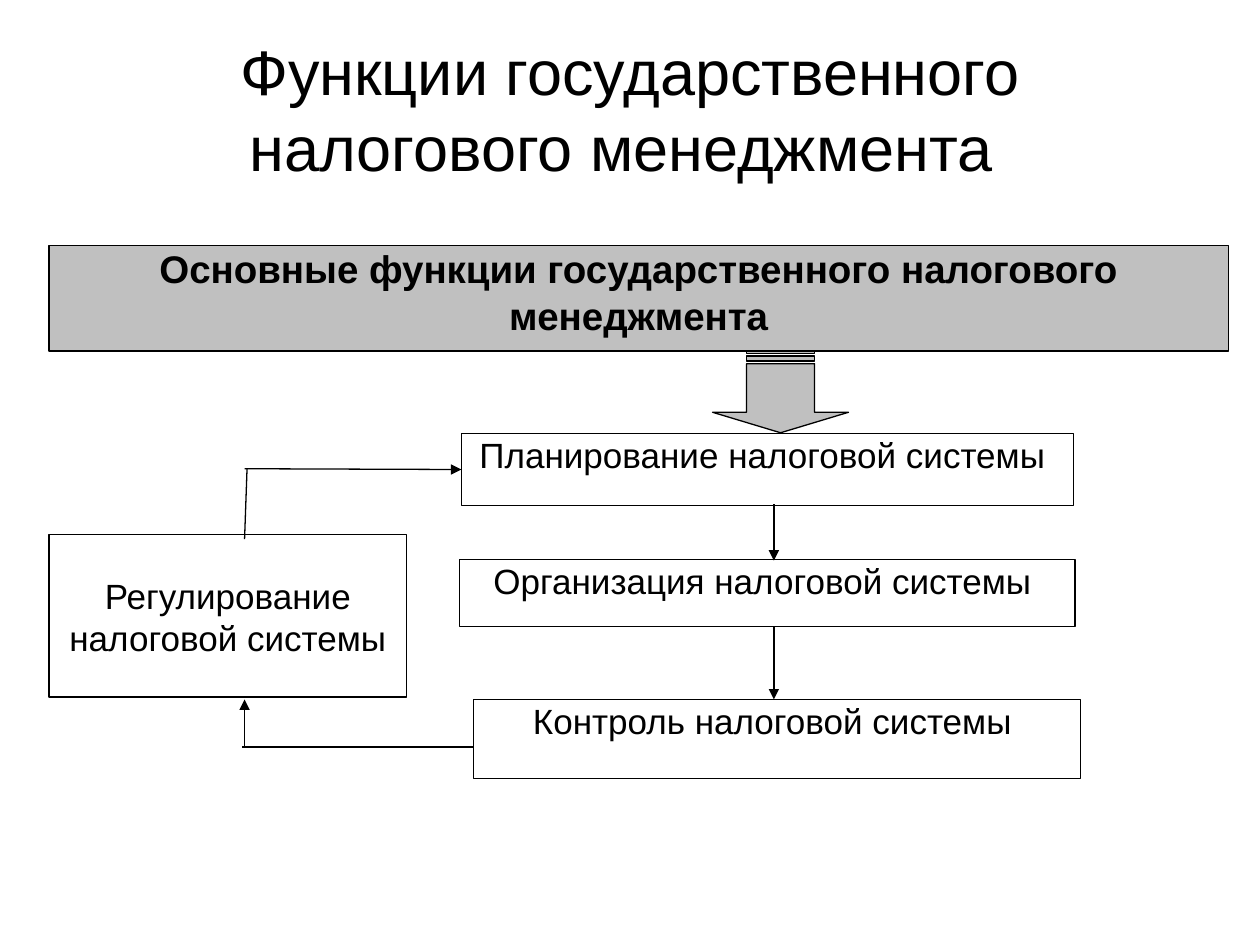
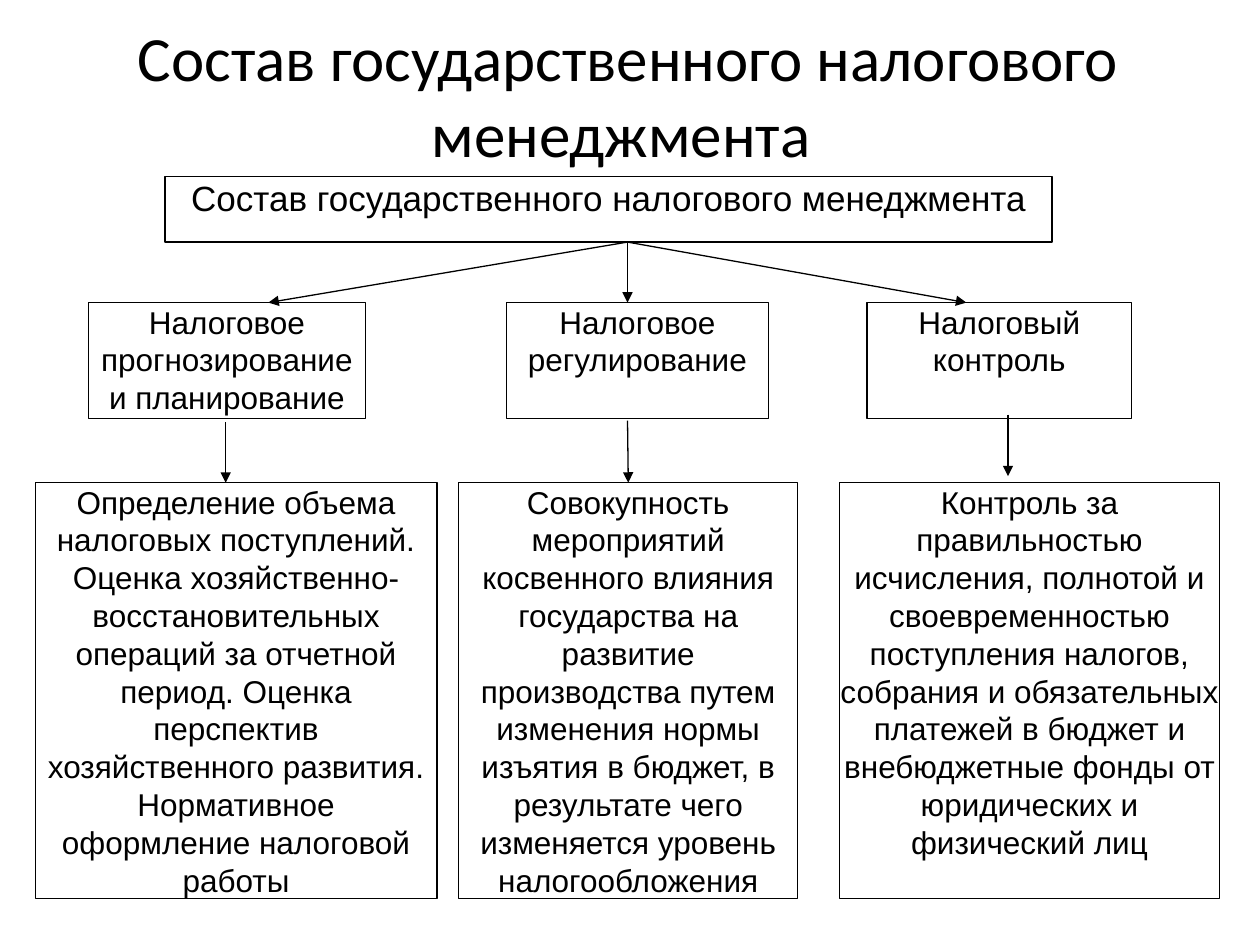
from dataclasses import dataclass

from lxml import etree
from pptx import Presentation
from pptx.dml.color import RGBColor
from pptx.enum.shapes import MSO_CONNECTOR, MSO_SHAPE
from pptx.enum.text import MSO_ANCHOR, MSO_AUTO_SIZE, PP_ALIGN
from pptx.oxml.ns import qn
from pptx.util import Cm, Pt

RECTANGLE = MSO_SHAPE.RECTANGLE
STRIPED_ARROW = MSO_SHAPE.STRIPED_RIGHT_ARROW
STRAIGHT = MSO_CONNECTOR.STRAIGHT
CENTER = PP_ALIGN.CENTER
TOP, MIDDLE = MSO_ANCHOR.TOP, MSO_ANCHOR.MIDDLE
NO_FIT = MSO_AUTO_SIZE.NONE
TOP_SIDE, LEFT_SIDE = 0, 1
TITLE_ONLY = 5


@dataclass(frozen=True)
class Theme:
    ink: RGBColor = RGBColor(0x00, 0x00, 0x00)
    paper: RGBColor = RGBColor(0xFF, 0xFF, 0xFF)
    accent: RGBColor = RGBColor(0xC0, 0xC0, 0xC0)
    font: str = "Arial"
    title_size: int = 36
    banner_size: int = 22
    box_size: int = 20
    detail_size: int = 18
    line_width: float = 0.75


class Diagram:
    """Draws diagram parts on the current page in one style."""

    def __init__(self, deck, theme):
        self.deck = deck
        self.theme = theme
        self.page = None

    def add_text(self, frame, text, size, font=None, bold=False):
        frame.word_wrap = True
        frame.auto_size = NO_FIT
        para = frame.paragraphs[0]
        para.alignment = CENTER
        span = para.add_run()
        span.text = text
        span.font.name = font or self.theme.font
        span.font.size = Pt(size)
        span.font.bold = bold
        span.font.color.rgb = self.theme.ink

    def add_page(self, text, place, font=None):
        self.page = self.deck.slides.add_slide(self.deck.slide_layouts[TITLE_ONLY])
        title = self.page.shapes.title
        title.left, title.top, title.width, title.height = map(Cm, place)
        title.text_frame.vertical_anchor = MIDDLE
        self.add_text(title.text_frame, text, self.theme.title_size, font)

    def add_outline(self, kind, place, fill):
        shape = self.page.shapes.add_shape(kind, *map(Cm, place))
        shape.shadow.inherit = False
        shape.fill.solid()
        shape.fill.fore_color.rgb = fill
        shape.line.color.rgb = self.theme.ink
        shape.line.width = Pt(self.theme.line_width)
        return shape

    def add_box(self, text, place, size=None, fill=None, bold=False, side=0, top=0):
        box = self.add_outline(RECTANGLE, place, fill or self.theme.paper)
        frame = box.text_frame
        frame.margin_left = frame.margin_right = Cm(side)
        frame.margin_top, frame.margin_bottom = Cm(top), Cm(0)
        frame.vertical_anchor = TOP
        self.add_text(frame, text, size or self.theme.box_size, bold=bold)
        return box

    def add_down_arrow(self, place):
        arrow = self.add_outline(STRIPED_ARROW, place, self.theme.accent)
        arrow.adjustments[1] = 0.25
        arrow.rotation = 90

    def add_line(self, start, end, head=True, join=None):
        line = self.page.shapes.add_connector(STRAIGHT, *map(Cm, start + end))
        line.line.color.rgb = self.theme.ink
        line.line.width = Pt(self.theme.line_width)
        properties = line.element.spPr
        if head:
            etree.SubElement(properties.find(qn("a:ln")), qn("a:tailEnd"), type="triangle")
        etree.SubElement(properties, qn("a:effectLst"))
        if join:
            line.end_connect(*join)


def build_functions(diagram):
    theme = diagram.theme
    diagram.add_page("Функции государственного налогового менеджмента ",
                     (1.27, 0.76, 22.86, 2.84), theme.font)

    # Banner and the cycle of functions
    diagram.add_box("Основные функции государственного налогового менеджмента",
                    (0.99, 4.95, 23.77, 2.13), theme.banner_size, theme.accent, bold=True)
    planning = diagram.add_box("Планирование налоговой системы ", (9.3, 8.74, 12.34, 1.45))
    diagram.add_box("Организация налоговой системы ", (9.27, 11.28, 12.4, 1.35))
    diagram.add_box("Контроль налоговой системы ", (9.55, 14.1, 12.24, 1.6))
    diagram.add_box("Регулирование налоговой системы", (0.99, 10.77, 7.21, 3.28), top=0.81)
    diagram.add_down_arrow((14.91, 6.53, 1.65, 2.74))

    # Control back to regulation, then to planning
    diagram.add_line((4.93, 15.06), (4.93, 14.1))
    diagram.add_line((4.88, 15.06), (9.55, 15.06), head=False)
    diagram.add_line((4.98, 9.45), (4.93, 10.87), head=False)
    diagram.add_line((4.93, 9.45), (9.3, 9.45), join=(planning, LEFT_SIDE))

    # Planning down to control
    for start, end in ((10.16, 11.3), (12.62, 14.1)):
        diagram.add_line((15.6, start), (15.6, end))


def build_structure(diagram):
    size = diagram.theme.detail_size
    diagram.add_page("Состав государственного налогового менеджмента ",
                     (0.46, 0.61, 24.41, 2.59), "Calibri")
    diagram.add_box("Состав государственного налогового менеджмента",
                    (3.33, 3.56, 17.88, 1.32))

    # Branches: text, left, width
    branches = (
        ("Налоговое прогнозирование и планирование", 1.78, 5.59),
        ("Налоговое регулирование", 10.21, 5.28),
        ("Налоговый контроль", 17.48, 5.33),
    )
    for text, left, width in branches:
        diagram.add_box(text, (left, 6.1, width, 2.34), size)

    # Content of each branch: text, left, width, side margin
    contents = (
        ("Определение объема налоговых поступлений. Оценка "
         "хозяйственно-восстановительных операций за отчетной период. Оценка "
         "перспектив хозяйственного развития. Нормативное оформление налоговой "
         "работы", 0.71, 8.1, 0.15),
        ("Совокупность мероприятий косвенного влияния государства на развитие "
         "производства путем изменения нормы изъятия в бюджет, в результате чего "
         "изменяется уровень налогообложения", 9.25, 6.83, 0),
        ("Контроль за правильностью исчисления, полнотой и своевременностью "
         "поступления налогов, собрания и обязательных платежей в бюджет и "
         "внебюджетные фонды от юридических и физический лиц", 16.92, 7.67, 0),
    )
    details = [diagram.add_box(text, (left, 9.73, width, 8.38), size, side=side)
               for text, left, width, side in contents]

    # Arrows from the root to the branches
    for target in (12.65, 5.41, 19.48):
        diagram.add_line((12.65, 4.88), (target, 6.1))

    # Arrows from the branches to their content
    diagram.add_line((4.55, 8.51), (4.55, 9.73))
    diagram.add_line((12.65, 8.48), (12.65, 9.7), join=(details[1], TOP_SIDE))
    diagram.add_line((20.32, 8.36), (20.32, 9.6))


def main():
    deck = Presentation()
    deck.slide_width, deck.slide_height = Cm(25.4), Cm(19.05)
    diagram = Diagram(deck, Theme())
    build_functions(diagram)
    build_structure(diagram)
    deck.save("out.pptx")


if __name__ == "__main__":
    main()
